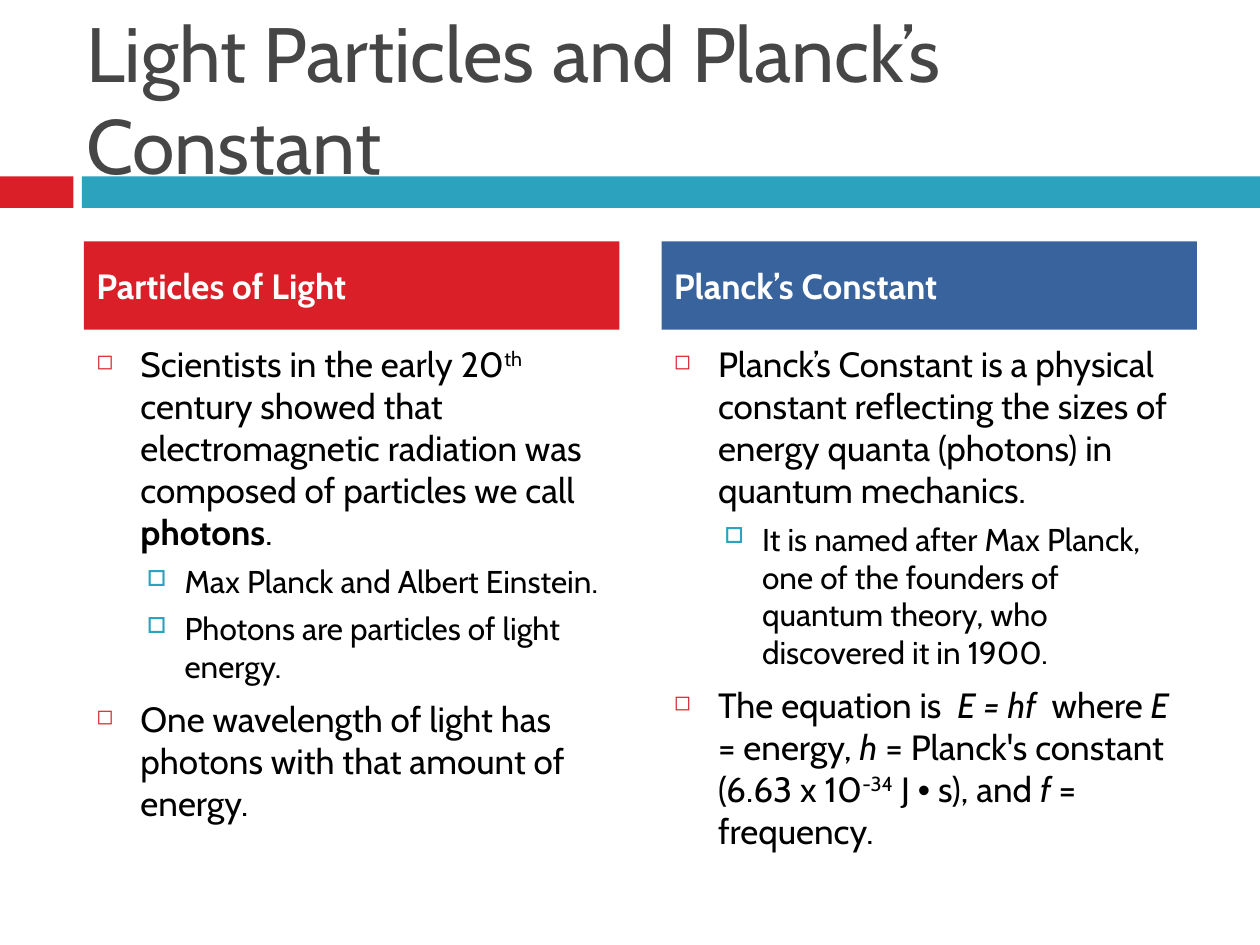
from lxml.etree import SubElement
from pptx import Presentation
from pptx.dml.color import RGBColor
from pptx.enum.shapes import MSO_SHAPE
from pptx.enum.text import MSO_ANCHOR, MSO_AUTO_SIZE, PP_ALIGN
from pptx.oxml.ns import qn
from pptx.util import Inches, Pt

FONT = "Cabin"
COLORS = {"red": "DA1F28", "teal": "2DA2BF", "blue": "39639D",
          "title": "464646", "text": "000000", "white": "FFFFFF"}

# One entry per outline level
LEVELS = [
    {"size": 20, "before": 7, "margin": 0.35, "hang": 0.35,
     "bullet": "◻", "color": "red", "percent": 60},
    {"size": 18, "before": 5.5, "margin": 0.7, "hang": 0.3,
     "bullet": "□", "color": "teal", "percent": 70},
]

# Each paragraph is a level and its spans; a span is a text and a style
COLUMNS = [
    ("Particles of Light", "red", [
        (0, [("Scientists in the early 20", ""), ("th", "super"),
             (" century showed that electromagnetic radiation was "
              "composed of particles we call ", ""),
             ("photons", "bold"), (".", "")]),
        (1, [("Max Planck and Albert Einstein.", "")]),
        (1, [("Photons are particles of light energy.", "")]),
        (0, [("One wavelength of light has photons with that amount of energy.", "")]),
    ]),
    ("Planck’s Constant", "blue", [
        (0, [("Planck’s Constant is a physical constant reflecting the sizes "
              "of energy quanta (photons) in quantum mechanics.", "")]),
        (1, [("It is named after Max Planck, one of the founders of quantum "
              "theory, who discovered it in 1900.", "")]),
        (0, [("The equation is  ", ""), ("E = hf  ", "italic"), ("where ", ""),
             ("E", "italic"), (" = energy, ", ""), ("h", "italic"),
             (" = Planck's constant (6.63 x 10", ""), ("-34", "super"),
             (" J ", ""), ("•", "symbol"), (" s), and ", ""),
             ("f", "italic"), (" = frequency.", "")]),
    ]),
]


def grid(*cells):
    """Turn grid cells, twelve to the inch, into lengths."""
    return [Inches(cell / 12) for cell in cells]


def set_font(span, size, color, name=FONT):
    span.font.size = Pt(size)
    span.font.name = name
    span.font.color.rgb = RGBColor.from_string(COLORS[color])


deck = Presentation()
deck.slide_width, deck.slide_height = grid(120, 90)
page = deck.slides.add_slide(deck.slide_layouts[5])
shapes = page.shapes

# Bars, with the title in front of them
bars = []
for left, width, color in [(0, 7, "red"), (7.8, 112.2, "teal")]:
    bars.append((shapes.add_shape(MSO_SHAPE.RECTANGLE, *grid(left, 16.8, width, 3)), color))

title = shapes.title
bars[-1][0]._element.addnext(title._element)
title.left, title.top, title.width, title.height = grid(7, 3.6, 107, 11.4)
title.text_frame.text = "Light Particles and Planck’s Constant"
title.text_frame.auto_size = MSO_AUTO_SIZE.NONE
title.text_frame.vertical_anchor = MSO_ANCHOR.MIDDLE
title.text_frame.paragraphs[0].alignment = PP_ALIGN.LEFT
set_font(title.text_frame.paragraphs[0].runs[0], 44, "title")

# Two columns, each a coloured heading above a bulleted outline
for index, (heading, color, outline) in enumerate(COLUMNS):
    left = 8 + index * 55
    header = shapes.add_shape(MSO_SHAPE.RECTANGLE, *grid(left, 23, 51, 8.4))
    bars.append((header, color))
    header.text_frame.text = heading
    header.text_frame.vertical_anchor = MSO_ANCHOR.MIDDLE
    paragraph = header.text_frame.paragraphs[0]
    paragraph.alignment = PP_ALIGN.LEFT
    set_font(paragraph.runs[0], 20, "white")
    paragraph.runs[0].font.bold = True

    box = shapes.add_textbox(*grid(left, 32, 51, 47))
    frame = box.text_frame
    frame.word_wrap = True
    for number, (level, spans) in enumerate(outline):
        look = LEVELS[level]
        paragraph = frame.add_paragraph() if number else frame.paragraphs[0]
        paragraph.level = level
        paragraph.space_before = Pt(look["before"])
        props = paragraph._p.get_or_add_pPr()
        props.set("marL", str(Inches(look["margin"])))
        props.set("indent", str(-Inches(look["hang"])))
        bullet_color = SubElement(props, qn("a:buClr"))
        SubElement(bullet_color, qn("a:srgbClr"), val=COLORS[look["color"]])
        SubElement(props, qn("a:buSzPct"), val=str(look["percent"] * 1000))
        SubElement(props, qn("a:buChar"), char=look["bullet"])
        for text, style in spans:
            span = paragraph.add_run()
            span.text = text
            set_font(span, look["size"], "text", "Arial" if style == "symbol" else FONT)
            if style == "bold":
                span.font.bold = True
            elif style == "italic":
                span.font.italic = True
            elif style == "super":
                span._r.get_or_add_rPr().set("baseline", "30000")

for bar, color in bars:
    bar.shadow.inherit = False
    bar.fill.solid()
    bar.fill.fore_color.rgb = RGBColor.from_string(COLORS[color])
    bar.line.fill.background()

deck.save("out.pptx")
